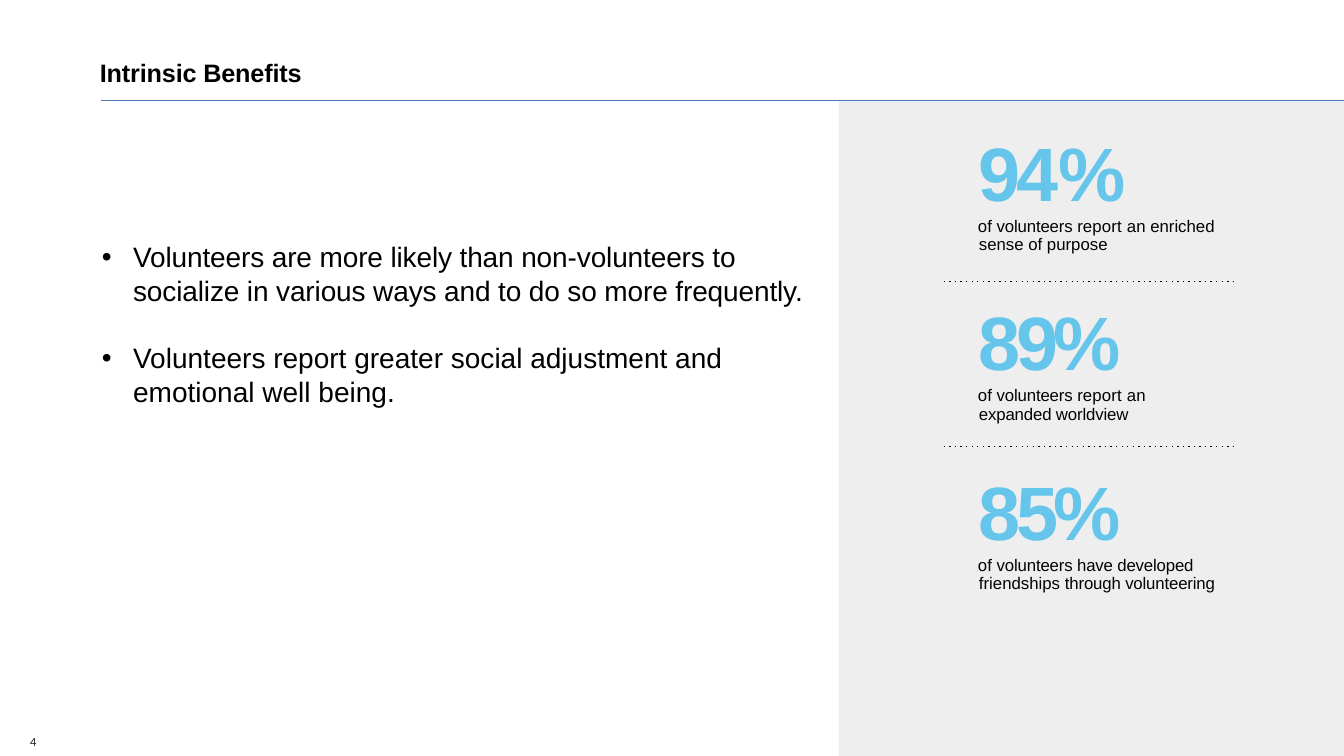
"""Builds the slide on the intrinsic benefits of volunteering."""
from dataclasses import dataclass

from lxml.etree import SubElement
from pptx import Presentation
from pptx.dml.color import RGBColor
from pptx.enum.shapes import MSO_CONNECTOR, MSO_SHAPE
from pptx.enum.text import MSO_ANCHOR, MSO_AUTO_SIZE, PP_ALIGN
from pptx.oxml.ns import qn
from pptx.util import Inches, Pt


@dataclass(frozen=True)
class Theme:
    """Colours, fonts and type sizes."""
    font: str = "Arial"
    minor: str = "Lato"
    black: str = "000000"
    ink: str = "010202"
    grey: str = "231F20"
    sky: str = "65C5EA"
    rule: str = "4B7EBC"
    panel: str = "EEEEEE"
    head: int = 18
    body: int = 20
    stat: int = 54
    note: int = 12
    foot: int = 8


class Page:
    """Draws elements on one slide in one style."""

    def __init__(self, deck, theme):
        self.theme = theme
        self.slide = deck.slides.add_slide(deck.slide_layouts[1])
        self.shapes = self.slide.shapes

    def frame(self, shape, inset):
        """Sets wrapping, anchor and insets of a text frame."""
        frame = shape.text_frame
        frame.word_wrap = True
        frame.auto_size = MSO_AUTO_SIZE.NONE
        frame.vertical_anchor = MSO_ANCHOR.TOP
        frame.margin_left = frame.margin_right = Inches(inset)
        frame.margin_top = frame.margin_bottom = Inches(inset / 2)
        return frame

    def place(self, shape, box):
        """Moves a placeholder into a box."""
        shape.left, shape.top, shape.width, shape.height = map(Inches, box)
        return self.frame(shape, 0.1)

    def add_runs(self, para, runs, size, color, bold=False, font=None):
        """Adds runs given as pairs of text and letter spacing."""
        para.alignment = PP_ALIGN.LEFT
        for text, gap in runs:
            run = para.add_run()
            run.text = text
            run.font.name = font or self.theme.font
            run.font.size = Pt(size)
            run.font.bold = bold
            run.font.color.rgb = RGBColor.from_string(color)
            run._r.get_or_add_rPr().set("spc", str(round(gap * 100)))

    def indent(self, para, left, first):
        """Sets the left margin and first-line indent."""
        props = para._p.get_or_add_pPr()
        props.set("marL", str(Inches(left)))
        props.set("indent", str(Inches(first)))
        return props

    def title(self, text, box):
        """Fills the title placeholder."""
        frame = self.place(self.shapes.title, box)
        self.add_runs(frame.paragraphs[0], [(text, -0.1)], self.theme.head,
                      self.theme.black, bold=True)

    def bullets(self, items, box):
        """Fills the body placeholder with a bullet list."""
        frame = self.place(self.slide.placeholders[1], box)
        for i, item in enumerate(items):
            para = frame.add_paragraph() if i else frame.paragraphs[0]
            props = self.indent(para, 0.33, -0.31)
            SubElement(props, qn("a:buChar"), char="•")
            para.line_spacing = Pt(24)
            para.space_before = Pt(24 if i else 0)
            self.add_runs(para, [item], self.theme.body, self.theme.black)

    def label(self, runs, box, size, color, pitch=None, **style):
        """Adds a text box without insets."""
        shape = self.shapes.add_textbox(*map(Inches, box))
        para = self.frame(shape, 0).paragraphs[0]
        self.indent(para, 0.01, -0.01 if pitch else 0)
        if pitch:
            para.line_spacing = Pt(pitch)
        self.add_runs(para, runs, size, color, **style)

    def panel(self, box):
        """Adds the plain background panel."""
        shape = self.shapes.add_shape(MSO_SHAPE.RECTANGLE, *map(Inches, box))
        shape.shadow.inherit = False
        shape.fill.solid()
        shape.fill.fore_color.rgb = RGBColor.from_string(self.theme.panel)
        shape.line.fill.background()

    def rule(self, left, right, top, color, width, dash=None):
        """Adds a horizontal line."""
        link = self.shapes.add_connector(
            MSO_CONNECTOR.STRAIGHT, Inches(left), Inches(top),
            Inches(right), Inches(top))
        link.line.color.rgb = RGBColor.from_string(color)
        link.line.width = Pt(width)
        props = link._element.spPr
        if dash:
            SubElement(props.find(qn("a:ln")), qn("a:prstDash"), val=dash)
        SubElement(props, qn("a:effectLst"))


def main():
    """Builds and saves the slide."""
    deck = Presentation()
    deck.slide_width, deck.slide_height = Inches(13.33), Inches(7.5)
    theme = Theme()
    page = Page(deck, theme)

    page.panel((8.32, 1, 5.01, 6.5))
    page.title("Intrinsic Benefits", (0.89, 0.52, 8.63, 0.4))
    page.rule(1, 13.33, 1, theme.rule, 0.75)
    page.bullets([
        ("Volunteers are more likely than non-volunteers to socialize in "
         "various ways and to do so more frequently.", -0.1),
        ("Volunteers report greater social adjustment and emotional well "
         "being.", 0),
    ], (0.89, 2.33, 7.22, 2.12))

    stats = [
        ([("94", -3.4), ("%", -6.2)], 2.74,
         [("of ", 0), ("volunteers ", -0.1), ("report ", 0.1),
          ("an enriched sense of purpose", 0)]),
        ([("89%", -3.4)], 2.3,
         [("of ", 0), ("volunteers ", -0.1), ("report ", 0.1), ("an ", 0),
          ("expanded worldview", -0.1)]),
        ([("85%", -3.4)], 2.74,
         [("of ", 0), ("volunteers have developed ", -0.1),
          ("friendships ", 0), ("through volunteering", -0.1)]),
    ]
    for i, (value, width, note) in enumerate(stats):
        top = 1.25 + 1.68 * i
        page.label(value, (9.7, top, 2.27, 0.91), theme.stat, theme.sky,
                   bold=True)
        page.label(note, (9.7, top + 0.91, width, 0.36), theme.note,
                   theme.ink, pitch=13)
    for top in (2.79, 4.43):
        page.rule(9.36, 12.26, top, theme.ink, 1, "dot")

    page.label([("4", 0.2)], (0.29, 7.3, 0.14, 0.13), theme.foot, theme.grey,
               font=theme.minor)
    deck.save("out.pptx")


if __name__ == "__main__":
    main()
